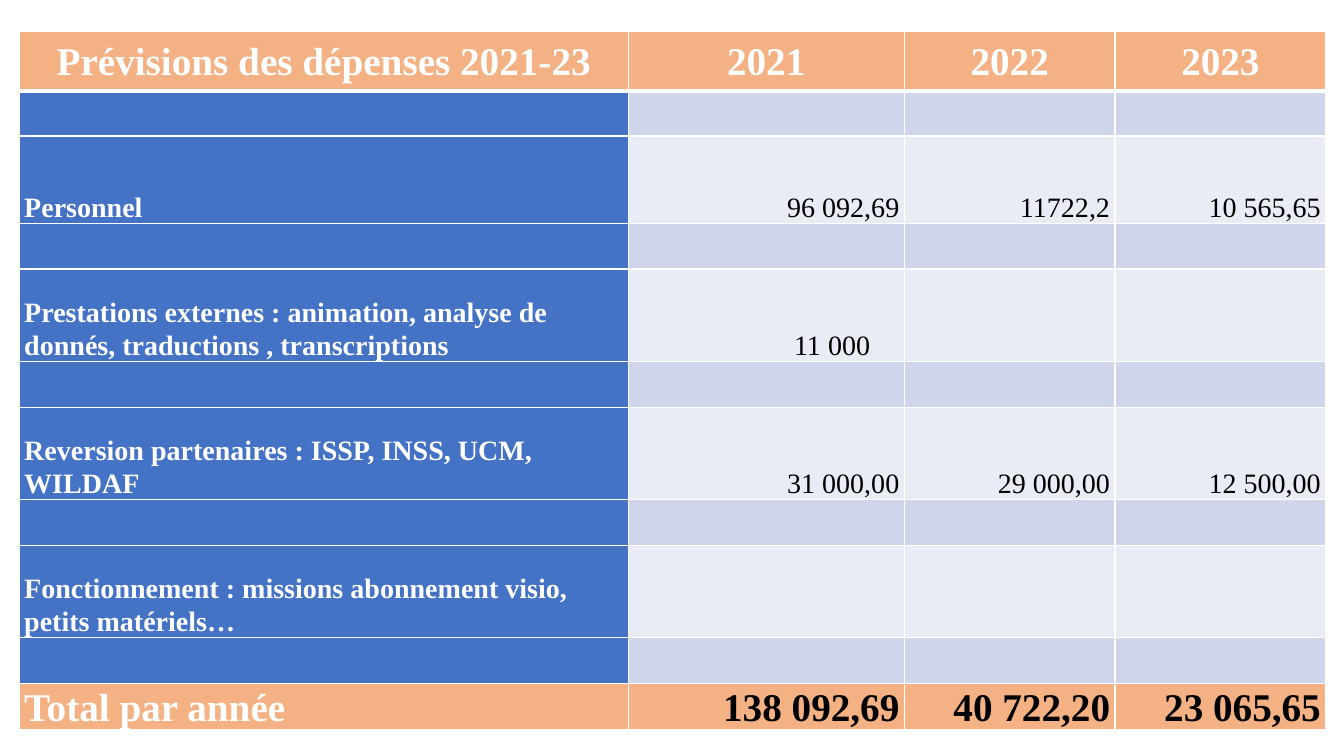
from lxml import etree
from pptx import Presentation
from pptx.dml.color import RGBColor
from pptx.enum.text import MSO_ANCHOR, PP_ALIGN
from pptx.oxml.ns import qn
from pptx.util import Inches, Pt

LEFT, CENTER, RIGHT = PP_ALIGN.LEFT, PP_ALIGN.CENTER, PP_ALIGN.RIGHT
MIDDLE, BOTTOM = MSO_ANCHOR.MIDDLE, MSO_ANCHOR.BOTTOM
COLORS = {"accent": "F4B183", "label": "4472C4", "gap": "CFD5EA",
          "value": "E9EBF5", "white": "FFFFFF", "black": "000000"}
FONT = "Times New Roman"
COL_WIDTHS = [6.04, 2.74, 2.09, 2.09]
HEADER_HEIGHT, GAP_HEIGHT = 0.59, 0.45
HEADER = ["Prévisions des dépenses 2021-23", "2021", "2022", "2023"]
EXPENSES = [
    (0.87, ["Personnel", "96 092,69", "11722,2", "10 565,65"]),
    (0.92, ["Prestations externes : animation, analyse de donnés, "
            "traductions , transcriptions", "11 000", "", ""]),
    (0.92, ["Reversion partenaires : ISSP, INSS, UCM, WILDAF",
            "31 000,00", "29 000,00", "12 500,00"]),
    (0.92, ["Fonctionnement : missions abonnement visio, petits matériels…",
            "", "", ""]),
]
TOTAL = ["Total par année", "138 092,69", "40 722,20", "23 065,65"]
INDENTED = {"11 000": 0.34}


def table_rows():
    """Return (kind, height, texts) for every row, with a gap around each expense."""
    gap = ("gap", GAP_HEIGHT, [""] * len(COL_WIDTHS))
    rows = [("header", HEADER_HEIGHT, HEADER), gap]
    for height, texts in EXPENSES:
        rows += [("expense", height, texts), gap]
    return rows + [("total", GAP_HEIGHT, TOTAL)]


def set_borders(cell, bottom):
    """Draw white cell borders, with the given bottom width in points."""
    tcPr = cell._tc.get_or_add_tcPr()
    widths = {"a:lnL": 1, "a:lnR": 1, "a:lnT": 1, "a:lnB": bottom}
    for i, (tag, width) in enumerate(widths.items()):
        ln = etree.Element(qn(tag), w=str(Pt(width)))
        fill = etree.SubElement(ln, qn("a:solidFill"))
        etree.SubElement(fill, qn("a:srgbClr"), val=COLORS["white"])
        tcPr.insert(i, ln)


def cell_style(kind, is_label):
    """Return the fill name, alignment and font format of a cell."""
    strong = kind in ("header", "total")
    if strong:
        fill = "accent"
    elif is_label:
        fill = "label"
    else:
        fill = "gap" if kind == "gap" else "value"
    align = CENTER if kind == "header" else LEFT if is_label else RIGHT
    color = "white" if is_label or kind == "header" else "black"
    font = {"name": FONT, "size": Pt(28 if strong else 20),
            "bold": strong or is_label}
    return fill, align, color, font


def format_cell(cell, text, kind, is_label):
    """Fill one table cell and format its text."""
    fill, align, color, font = cell_style(kind, is_label)
    cell.fill.solid()
    cell.fill.fore_color.rgb = RGBColor.from_string(COLORS[fill])
    layout = {"margin_left": Inches(0.05), "margin_top": 0, "margin_bottom": 0,
              "margin_right": Inches(INDENTED.get(text, 0.05)),
              "vertical_anchor": MIDDLE if kind == "header" else BOTTOM}
    for name, value in layout.items():
        setattr(cell, name, value)
    set_borders(cell, 3 if kind == "header" else 1)
    if not text:
        return
    p = cell.text_frame.paragraphs[0]
    spacing = {"alignment": align, "line_spacing": 1.07, "space_after": Pt(8)}
    for name, value in spacing.items():
        setattr(p, name, value)
    r = p.add_run()
    r.text = text
    for name, value in font.items():
        setattr(r.font, name, value)
    r.font.color.rgb = RGBColor.from_string(COLORS[color])


def add_budget_table(slide, left, top):
    """Place the expense table with its corner at left, top."""
    rows = table_rows()
    width, height = sum(COL_WIDTHS), sum(row[1] for row in rows)
    table = slide.shapes.add_table(len(rows), len(COL_WIDTHS), Inches(left),
                                   Inches(top), Inches(width), Inches(height)).table
    table.first_row = table.horz_banding = False
    for column, col_width in zip(table.columns, COL_WIDTHS):
        column.width = Inches(col_width)
    for row, (kind, row_height, texts) in zip(table.rows, rows):
        row.height = Inches(row_height)
        for i, (cell, text) in enumerate(zip(row.cells, texts)):
            format_cell(cell, text, kind, i == 0)


def main():
    """Build and save the budget slide."""
    prs = Presentation()
    prs.slide_width, prs.slide_height = Inches(13.33), Inches(7.5)
    slide = prs.slides.add_slide(prs.slide_layouts[6])
    add_budget_table(slide, 0.19, 0.31)
    prs.save("out.pptx")


if __name__ == "__main__":
    main()
